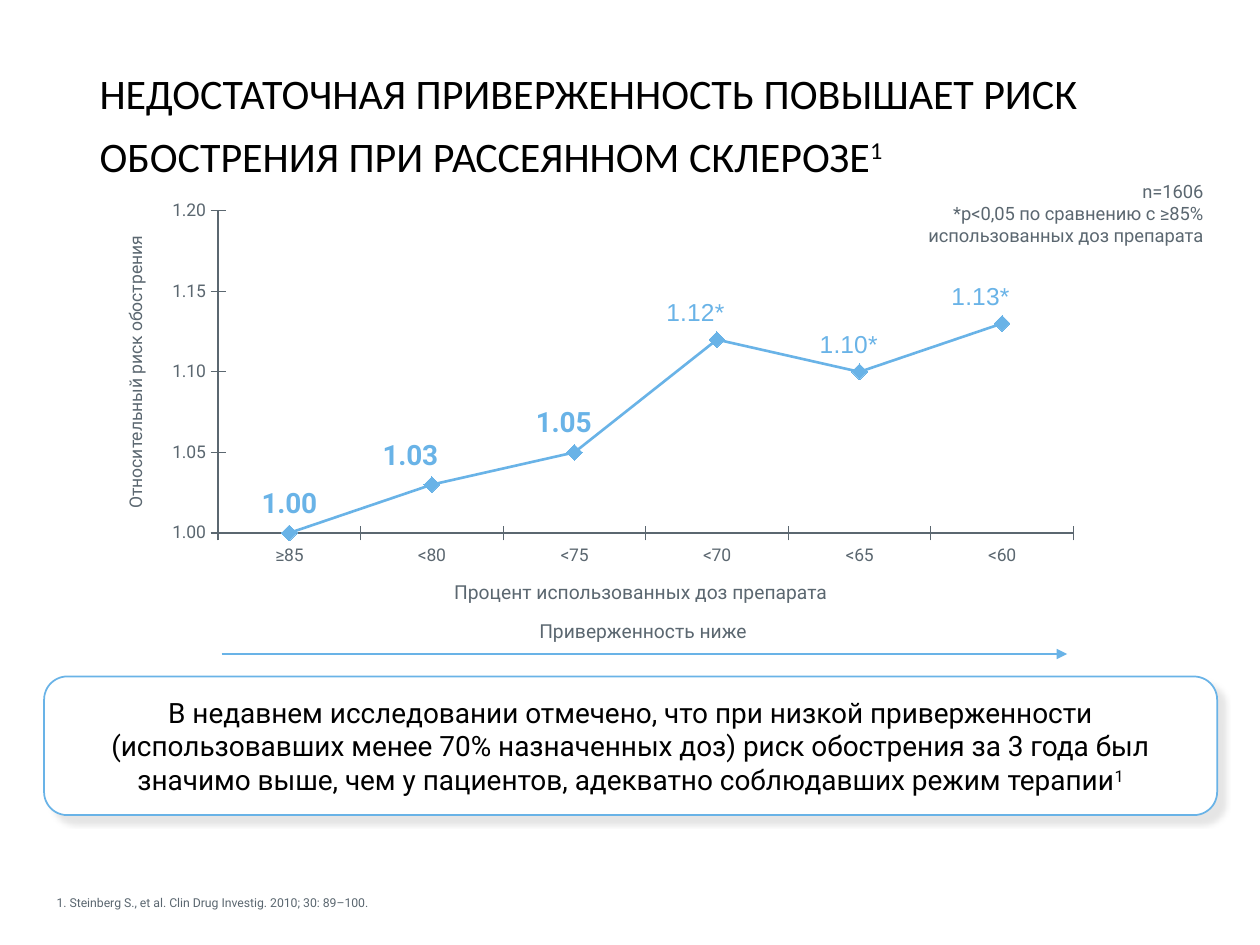
from dataclasses import dataclass

from lxml import etree
from pptx import Presentation
from pptx.chart.data import CategoryChartData
from pptx.dml.color import RGBColor
from pptx.enum.chart import XL_CHART_TYPE, XL_LABEL_POSITION, XL_MARKER_STYLE, XL_TICK_MARK
from pptx.enum.shapes import MSO_CONNECTOR, MSO_SHAPE
from pptx.enum.text import MSO_ANCHOR, PP_ALIGN
from pptx.oxml import parse_xml
from pptx.oxml.ns import nsdecls, qn
from pptx.util import Pt

LEFT, MID, RIGHT = PP_ALIGN.LEFT, PP_ALIGN.CENTER, PP_ALIGN.RIGHT
TOP, CENTRE = MSO_ANCHOR.TOP, MSO_ANCHOR.MIDDLE
ABOVE = XL_LABEL_POSITION.ABOVE
CROSS = XL_TICK_MARK.CROSS
BLUE, GREY, BLACK, WHITE = "69B3E7", "5B6770", "000000", "FFFFFF"
FONT = "Roboto"


@dataclass
class Note:
    text: str
    box: tuple
    size: float
    align: PP_ALIGN = MID
    anchor: MSO_ANCHOR = TOP
    turn: int = 0


@dataclass
class Dose:
    name: str
    risk: float
    shift: float
    label: str = ""


NOTES = [
    Note("1. Steinberg S., et al. Clin Drug Investig. 2010; 30: 89–100.",
         (25.2, 491, 670.3, 49), 7, LEFT, CENTRE),
    Note("Относительный риск обострения", (-8.6, 203, 172, 19.4), 10, turn=270),
    Note("Процент использованных доз препарата", (124.7, 328.3, 483, 20.9), 11),
    Note("n=1606\n*p<0,05 по сравнению с ≥85% использованных доз препарата",
         (465.1, 99.4, 229.7, 52.6), 10.5, RIGHT),
    Note("Приверженность ниже", (270, 350.6, 195, 20.9), 11),
]

# Shift is the label's sideways move, as a share of the chart width
DOSES = [
    Dose("≥85", 1.00, 0.0),
    Dose("<80", 1.03, -0.02),
    Dose("<75", 1.05, -0.01),
    Dose("<70", 1.12, -0.02, "1.12*"),
    Dose("<65", 1.10, -0.01, "1.10*"),
    Dose("<60", 1.13, -0.02, "1.13*"),
]


def hue(code: str) -> RGBColor:
    return RGBColor.from_string(code)


def style(font, size: float, color: str, face: str = FONT, bold: bool = False) -> None:
    font.size, font.name, font.bold = Pt(size), face, bold
    font.color.rgb = hue(color)


def write(frame, text: str, *, size: float, color: str = GREY, face: str = FONT,
          bold: bool = False, align=LEFT, anchor=TOP, sup: str = "", gap=None) -> None:
    """Split paragraphs at newlines and lines at bars; sup is raised at the end."""
    frame.word_wrap = True
    frame.vertical_anchor = anchor
    for i, part in enumerate(text.split("\n")):
        para = frame.add_paragraph() if i else frame.paragraphs[0]
        para.alignment = align
        if gap:
            para.line_spacing = gap
        for j, line in enumerate(part.split("|")):
            if j:
                para.add_line_break()
            run = para.add_run()
            run.text = line
            style(run.font, size, color, face, bold)
    if sup:
        run = para.add_run()
        run.text = sup
        style(run.font, size, color, face, bold)
        run.font._element.set("baseline", "30000")


def add_note(slide, note: Note) -> None:
    box = slide.shapes.add_textbox(*map(Pt, note.box))
    box.rotation = note.turn
    write(box.text_frame, note.text, size=note.size, align=note.align, anchor=note.anchor)


def place(x: float, y: float, w: float = 0, h: float = 0):
    """Make a manual layout: a label offset, or a plot area when w is given."""
    root = parse_xml(f"<c:layout {nsdecls('c')}><c:manualLayout/></c:layout>")
    pairs = [("x", x), ("y", y)]
    if w:
        pairs = [("layoutTarget", "inner"), ("xMode", "edge"), ("yMode", "edge"),
                 *pairs, ("w", w), ("h", h)]
    for tag, val in pairs:
        etree.SubElement(root[0], qn(f"c:{tag}")).set("val", str(val))
    return root


def add_chart(slide) -> None:
    data = CategoryChartData(number_format="#,##0.00")
    data.categories = [d.name for d in DOSES]
    data.add_series("Series 1", [d.risk for d in DOSES])
    chart = slide.shapes.add_chart(XL_CHART_TYPE.LINE_MARKERS, Pt(61.2), Pt(93.6),
                                   Pt(615.6), Pt(239.8), data).chart
    chart.has_legend = chart.has_title = False
    style(chart.font, 14, BLACK, "Arial")
    chart.plots[0].vary_by_categories = False

    # Axes
    for axis in (chart.category_axis, chart.value_axis):
        axis.has_major_gridlines = False
        axis.major_tick_mark = CROSS
        axis.format.line.color.rgb = hue(GREY)
        axis.format.line.width = Pt(0.75)
        style(axis.tick_labels.font, 10, GREY)
    scale = chart.value_axis
    scale.minimum_scale, scale.maximum_scale, scale.major_unit = 1, 1.2, 0.05
    scale.tick_labels.number_format = "#,##0.00"
    scale.tick_labels.number_format_is_linked = False

    # Line and markers
    line = chart.plots[0].series[0]
    line.smooth = False
    line.format.line.color.rgb = hue(BLUE)
    line.format.line.width = Pt(1.5)
    mark = line.marker
    mark.style, mark.size = XL_MARKER_STYLE.DIAMOND, 9
    mark.format.fill.solid()
    mark.format.fill.fore_color.rgb = hue(BLUE)
    mark.format.line.color.rgb = hue(BLUE)

    # Point labels
    for i, dose in enumerate(DOSES):
        label = line.points[i].data_label
        if dose.label:
            write(label.text_frame, dose.label, size=14, color=BLUE, face="Arial", align=MID)
        else:
            style(label.font, 16, BLUE, bold=True)
        label.position = ABOVE
    for node, dose in zip(line._element.iter(qn("c:dLbl")), DOSES):
        node.insert(1, place(dose.shift, 0))

    # Plot area
    area = chart._chartSpace.find(".//" + qn("c:plotArea"))
    for old in area.findall(qn("c:layout")):
        area.remove(old)
    area.insert(0, place(0.103, 0.112, 0.794, 0.768))


def add_panel(slide) -> None:
    panel = slide.shapes.add_shape(MSO_SHAPE.ROUNDED_RECTANGLE, Pt(25.2), Pt(386.6),
                                   Pt(670.3), Pt(79.2))
    panel.fill.solid()
    panel.fill.fore_color.rgb = hue(WHITE)
    panel.line.color.rgb = hue(BLUE)
    panel.line.width = Pt(1)
    panel._element.spPr.append(parse_xml(
        f"<a:effectLst {nsdecls('a')}><a:outerShdw blurRad='{Pt(3)}' dist='{Pt(6)}' "
        "dir='2700000' algn='tl' rotWithShape='0'><a:srgbClr val='000000'>"
        "<a:alpha val='9000'/></a:srgbClr></a:outerShdw></a:effectLst>"))
    write(panel.text_frame,
          "В недавнем исследовании отмечено, что при низкой приверженности|"
          "(использовавших менее 70% назначенных доз) риск обострения за 3 года был|"
          "значимо выше, чем у пациентов, адекватно соблюдавших режим терапии",
          size=16, color=BLACK, align=MID, anchor=CENTRE, sup="1")


def add_arrow(slide) -> None:
    arrow = slide.shapes.add_connector(MSO_CONNECTOR.STRAIGHT, Pt(126.7), Pt(373.7),
                                       Pt(609.8), Pt(373.7))
    arrow.line.color.rgb = hue(BLUE)
    arrow.line.width = Pt(1.5)
    etree.SubElement(arrow.line._get_or_add_ln(), qn("a:tailEnd")).set("type", "triangle")
    etree.SubElement(arrow._element.spPr, qn("a:effectLst"))


def main() -> None:
    deck = Presentation()
    deck.slide_width, deck.slide_height = Pt(720), Pt(540)
    slide = deck.slides.add_slide(deck.slide_layouts[5])

    # Title
    title = slide.shapes.title
    title.left, title.top, title.width, title.height = map(Pt, (49.7, 16.6, 620.6, 101.5))
    write(title.text_frame,
          "НЕДОСТАТОЧНАЯ ПРИВЕРЖЕННОСТЬ ПОВЫШАЕТ РИСК ОБОСТРЕНИЯ ПРИ РАССЕЯННОМ СКЛЕРОЗЕ",
          size=24, color=BLACK, face="Calibri", anchor=CENTRE, sup="1", gap=1.25)

    # Body
    add_panel(slide)
    add_chart(slide)
    for note in NOTES:
        add_note(slide, note)
    add_arrow(slide)
    deck.save("out.pptx")


if __name__ == "__main__":
    main()
